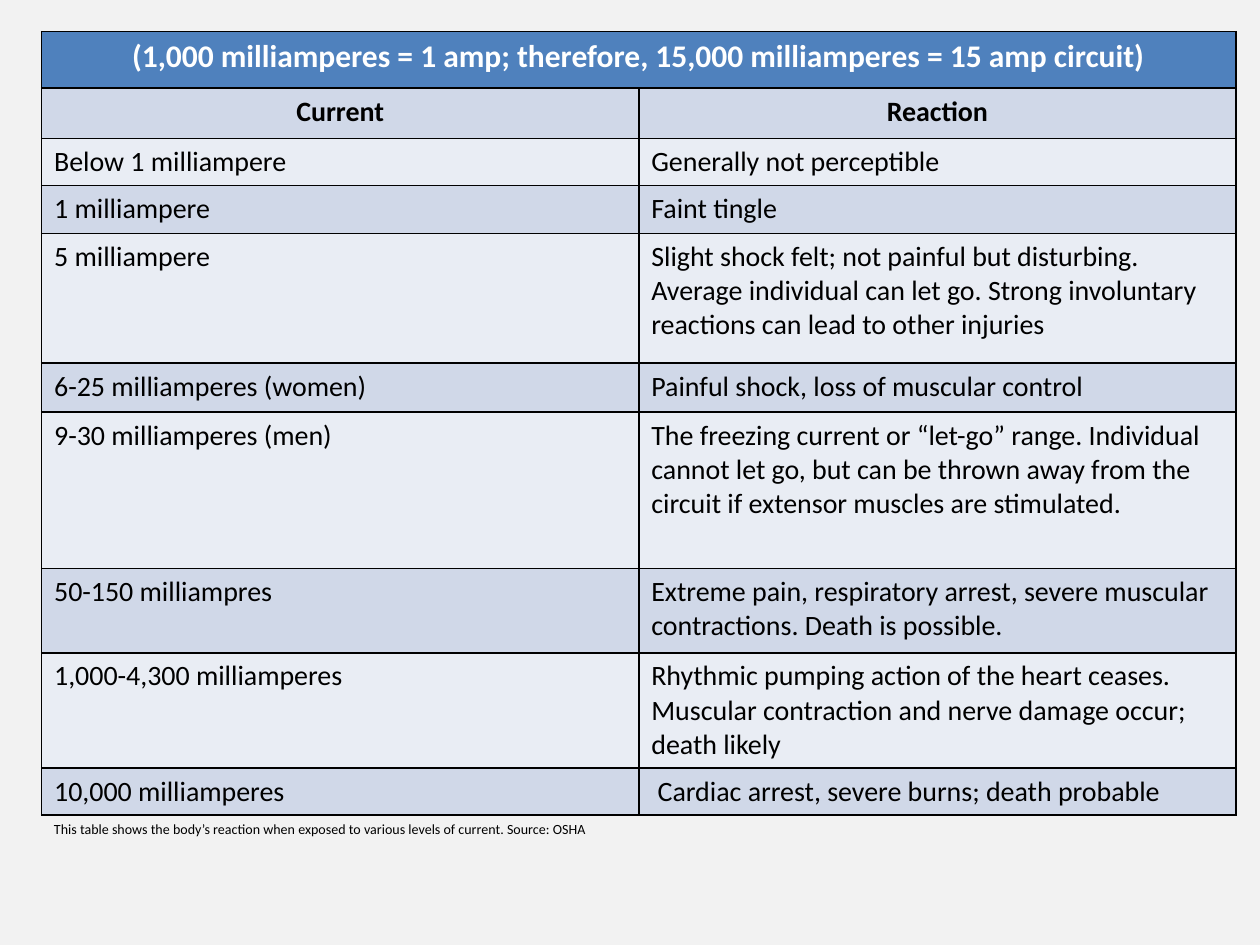
from dataclasses import dataclass

from lxml import etree
from pptx import Presentation
from pptx.dml.color import RGBColor
from pptx.enum.text import MSO_AUTO_SIZE, PP_ALIGN
from pptx.oxml.ns import qn
from pptx.util import Inches, Pt

LEFT, CENTER = PP_ALIGN.LEFT, PP_ALIGN.CENTER
GROW = MSO_AUTO_SIZE.SHAPE_TO_FIT_TEXT
BORDER_SIDES = ("a:lnL", "a:lnR", "a:lnT", "a:lnB")

TITLE = "(1,000 milliamperes = 1 amp; therefore, 15,000 milliamperes = 15 amp circuit)"
HEADINGS = ("Current", "Reaction")
REACTIONS = [
    ("Below 1 milliampere", "Generally not perceptible", 0.35),
    ("1 milliampere", "Faint tingle", 0.38),
    ("5 milliampere", "Slight shock felt; not painful but disturbing. Average individual "
     "can let go. Strong involuntary reactions can lead to other injuries", 1.03),
    ("6-25 milliamperes (women)", "Painful shock, loss of muscular control", 0.39),
    ("9-30 milliamperes (men)", "The freezing current or “let-go” range. Individual cannot let go, "
     "but can be thrown away from the circuit if extensor muscles are stimulated.", 1.24),
    ("50-150 milliampres", "Extreme pain, respiratory arrest, severe muscular contractions. "
     "Death is possible.", 0.67),
    ("1,000-4,300 milliamperes", "Rhythmic pumping action of the heart ceases. Muscular contraction "
     "and nerve damage occur; death likely", 0.86),
    ("10,000 milliamperes", " Cardiac arrest, severe burns; death probable", 0.35),
]
CAPTION = "This table shows the body’s reaction when exposed to various levels of current. Source: OSHA"


@dataclass(frozen=True)
class Theme:
    font: str = "Calibri"
    background: str = "F2F2F2"
    ink: str = "000000"
    light: str = "FFFFFF"
    banner: str = "4F81BD"
    bands: tuple = ("D0D8E8", "E9EDF4")
    title_size: int = 18
    body_size: int = 16
    small_size: int = 8
    border_width: int = 1


def write_text(frame, text, *, font, size, color, bold=False, align=LEFT):
    para = frame.paragraphs[0]
    para.alignment = align
    span = para.add_run()
    span.text = text
    span.font.name = font
    span.font.size = Pt(size)
    span.font.bold = bold
    span.font.color.rgb = RGBColor.from_string(color)


class SlideBuilder:
    """Draws styled elements on the current slide."""

    def __init__(self, page, theme):
        self.page = page
        self.theme = theme

    def background(self):
        fill = self.page.background.fill
        fill.solid()
        fill.fore_color.rgb = RGBColor.from_string(self.theme.background)

    def borders(self, cell):
        properties = cell._tc.get_or_add_tcPr()
        for index, side in enumerate(BORDER_SIDES):
            line = etree.Element(qn(side), w=str(Pt(self.theme.border_width)))
            fill = etree.SubElement(line, qn("a:solidFill"))
            etree.SubElement(fill, qn("a:srgbClr"), val=self.theme.ink)
            properties.insert(index, line)

    def cell(self, cell, text, fill, **style):
        cell.fill.solid()
        cell.fill.fore_color.rgb = RGBColor.from_string(fill)
        self.borders(cell)
        if text:
            write_text(cell.text_frame, text, font=self.theme.font, **style)

    def table(self, title, headings, rows, left, top, width):
        theme = self.theme
        heights = [0.45, 0.4] + [height for *_, height in rows]
        table = self.page.shapes.add_table(
            len(heights), len(headings), Inches(left), Inches(top),
            Inches(width), Inches(sum(heights))).table
        for row, height in zip(table.rows, heights):
            row.height = Inches(height)
        for column in table.columns:
            column.width = Inches(width / len(headings))
        table.cell(0, 0).merge(table.cell(0, len(headings) - 1))
        for column, text in enumerate((title, "")):
            self.cell(table.cell(0, column), text, theme.banner, size=theme.title_size,
                      color=theme.light, bold=True, align=CENTER)
        body = [headings] + [(current, reaction) for current, reaction, _ in rows]
        for index, texts in enumerate(body):
            heading = index == 0
            for column, text in enumerate(texts):
                self.cell(table.cell(index + 1, column), text, theme.bands[index % 2],
                          size=theme.body_size, color=theme.ink, bold=heading,
                          align=CENTER if heading else LEFT)

    def text(self, text, left, top, width, height, **style):
        box = self.page.shapes.add_textbox(Inches(left), Inches(top), Inches(width), Inches(height))
        box.text_frame.word_wrap = True
        box.text_frame.auto_size = GROW
        write_text(box.text_frame, text, font=self.theme.font, **style)


def main():
    theme = Theme()
    deck = Presentation()
    deck.slide_width, deck.slide_height = Inches(10), Inches(7.5)
    builder = SlideBuilder(deck.slides.add_slide(deck.slide_layouts[6]), theme)
    builder.background()
    builder.table(TITLE, HEADINGS, REACTIONS, 0.33, 0.25, 9.48)
    builder.text(CAPTION, 0.33, 6.46, 9.48, 0.24, size=theme.small_size, color=theme.ink)
    deck.save("out.pptx")


if __name__ == "__main__":
    main()
